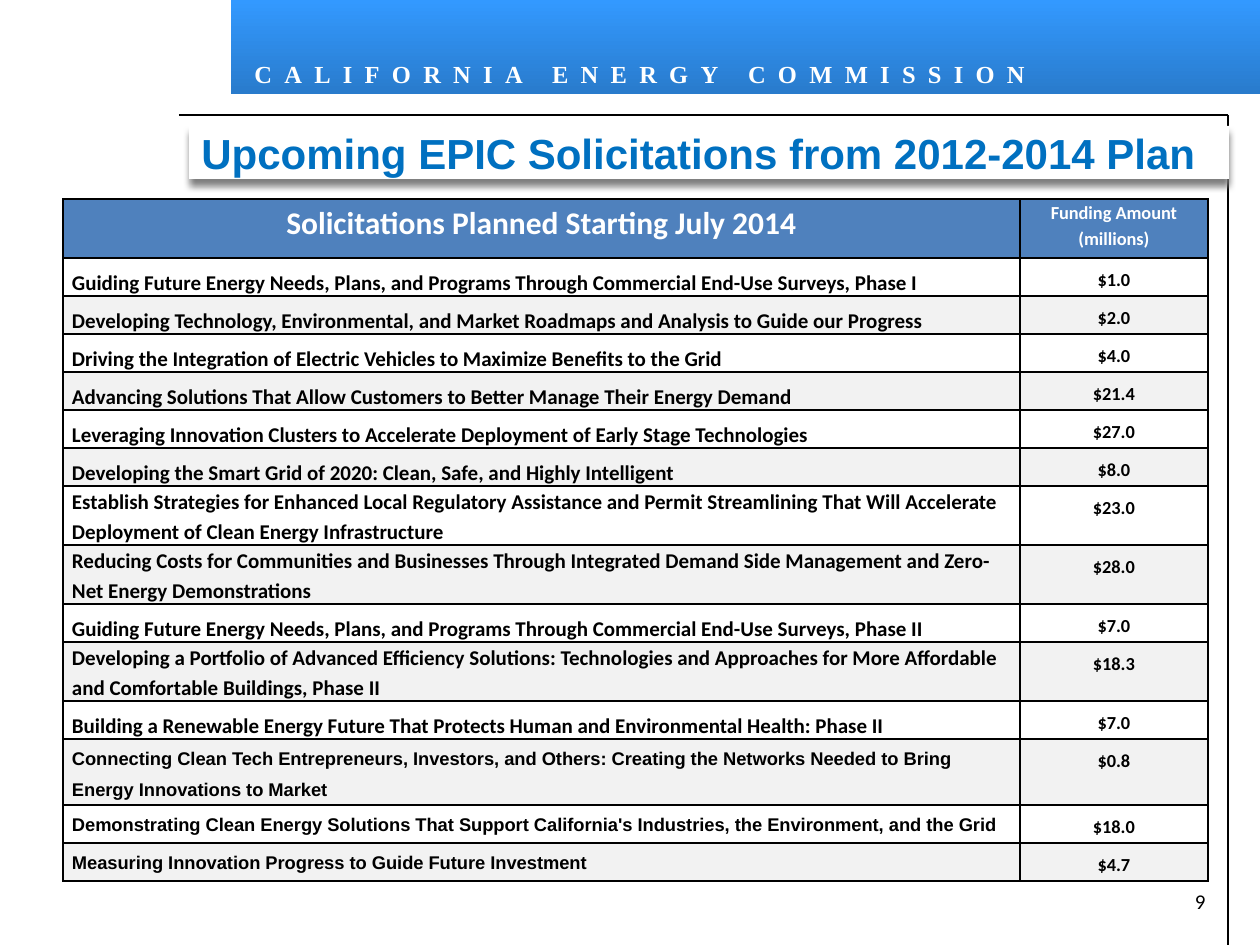
from pptx import Presentation
from pptx.dml.color import RGBColor
from pptx.enum.shapes import MSO_CONNECTOR, MSO_SHAPE
from pptx.enum.text import MSO_ANCHOR, PP_ALIGN
from pptx.oxml import parse_xml
from pptx.oxml.ns import nsdecls
from pptx.util import Pt

EMU_PER_PX = 914400 // 126

WHITE = RGBColor(0xFF, 0xFF, 0xFF)
BLACK = RGBColor(0x00, 0x00, 0x00)
BANNER_TOP = RGBColor(0x33, 0x99, 0xFF)
BANNER_BOTTOM = RGBColor(0x29, 0x7B, 0xCC)
TITLE_BLUE = RGBColor(0x00, 0x70, 0xC0)
HEADER_BLUE = RGBColor(0x4F, 0x81, 0xBD)
BAND_GRAY = RGBColor(0xF2, 0xF2, 0xF2)

HEADER_HEIGHT = 59
COLUMN_WIDTHS = (957, 188)

SOLICITATIONS = [
    ("Guiding Future Energy Needs, Plans, and Programs Through Commercial End-Use Surveys, Phase I", "$1.0", 38),
    ("Developing Technology, Environmental, and Market Roadmaps and Analysis to Guide our Progress", "$2.0", 38),
    ("Driving the Integration of Electric Vehicles to Maximize Benefits to the Grid", "$4.0", 38),
    ("Advancing Solutions That Allow Customers to Better Manage Their Energy Demand", "$21.4", 38),
    ("Leveraging Innovation Clusters to Accelerate Deployment of Early Stage Technologies", "$27.0", 38),
    ("Developing the Smart Grid of 2020: Clean, Safe, and Highly Intelligent", "$8.0", 38),
    ("Establish Strategies for Enhanced Local Regulatory Assistance and Permit Streamlining That Will Accelerate "
     "Deployment of Clean Energy Infrastructure", "$23.0", 59),
    ("Reducing Costs for Communities and Businesses Through Integrated Demand Side Management and Zero-Net "
     "Energy Demonstrations", "$28.0", 59),
    ("Guiding Future Energy Needs, Plans, and Programs Through Commercial End-Use Surveys, Phase II", "$7.0", 38),
    ("Developing a Portfolio of Advanced Efficiency Solutions: Technologies and Approaches for More Affordable "
     "and Comfortable Buildings, Phase II", "$18.3", 59),
    ("Building a Renewable Energy Future That Protects Human and Environmental Health: Phase II", "$7.0", 38),
]
ARIAL_SOLICITATIONS = [
    ("Connecting Clean Tech Entrepreneurs, Investors, and Others: Creating the Networks Needed to Bring "
     "Energy Innovations to Market", "$0.8", 64),
    ("Demonstrating Clean Energy Solutions That Support California's Industries, the Environment, and the Grid",
     "$18.0", 38),
    ("Measuring Innovation Progress to Guide Future Investment", "$4.7", 38),
]


def px(length):
    return length * EMU_PER_PX


def write(text_frame, text, size, font_name, color, bold=True, align=PP_ALIGN.LEFT, line_spacing=None):
    text_frame.text = text
    text_frame.word_wrap = True
    paragraph = text_frame.paragraphs[0]
    paragraph.alignment = align
    paragraph.line_spacing = line_spacing
    font = paragraph.runs[0].font
    font.size = Pt(size)
    font.name = font_name
    font.bold = bold
    font.color.rgb = color


def add_text(slide, left, top, width, height, *text_style, **options):
    text_box = slide.shapes.add_textbox(px(left), px(top), px(width), px(height))
    write(text_box.text_frame, *text_style, **options)
    return text_box


def add_block(slide, left, top, width, height):
    shape = slide.shapes.add_shape(MSO_SHAPE.RECTANGLE, px(left), px(top), px(width), px(height))
    shape.shadow.inherit = False
    shape.line.fill.background()
    return shape


def add_rule(slide, x1, y1, x2, y2):
    rule = slide.shapes.add_connector(MSO_CONNECTOR.STRAIGHT, px(x1), px(y1), px(x2), px(y2))
    rule.line.color.rgb = BLACK
    rule.line.width = Pt(0.75)
    rule._element.spPr.append(parse_xml(f"<a:effectLst {nsdecls('a')}/>"))


def add_banner(slide):
    banner = add_block(slide, 231, 0, 1029, 94)
    banner.fill.gradient()
    banner.fill.gradient_angle = 270
    for stop, color in zip(banner.fill.gradient_stops, (BANNER_TOP, BANNER_BOTTOM)):
        stop.color.rgb = color
    text_box = add_text(slide, 242, 53, 1008, 42, "CALIFORNIA ENERGY COMMISSION", 14, "Times New Roman", WHITE)
    run = text_box.text_frame.paragraphs[0].runs[0]
    run.font._element.set("spc", "700")


def add_title(slide):
    title = add_block(slide, 189, 126, 1040, 53)
    title.fill.solid()
    title.fill.fore_color.rgb = WHITE
    effects = title._element.spPr.find("{*}effectLst")
    effects.append(parse_xml(
        f'<a:outerShdw {nsdecls("a")} blurRad="{Pt(4)}" dist="{Pt(4)}" dir="5400000" '
        'algn="t" rotWithShape="0"><a:srgbClr val="808080"/></a:outerShdw>'))
    title.text_frame.vertical_anchor = MSO_ANCHOR.MIDDLE
    write(title.text_frame, "Upcoming EPIC Solicitations from 2012-2014 Plan", 24, "Arial", TITLE_BLUE)


def fill_cell(cell, fill_color, *text_style, **options):
    cell.margin_left = cell.margin_right = px(9)
    cell.margin_top = cell.margin_bottom = 0
    properties = cell._tc.get_or_add_tcPr()
    for side in "LRTB":
        properties.append(parse_xml(
            f'<a:ln{side} {nsdecls("a")} w="{Pt(1)}"><a:solidFill>'
            f'<a:srgbClr val="{BLACK}"/></a:solidFill></a:ln{side}>'))
    cell.fill.solid()
    cell.fill.fore_color.rgb = fill_color
    write(cell.text_frame, *text_style, **options)


def add_solicitation_table(slide):
    rows = SOLICITATIONS + ARIAL_SOLICITATIONS
    heights = [HEADER_HEIGHT] + [height for _, _, height in rows]
    table = slide.shapes.add_table(
        len(heights), 2, px(63), px(199), px(sum(COLUMN_WIDTHS)), px(sum(heights))).table
    table.first_row = table.horz_banding = False
    for column, width in zip(table.columns, COLUMN_WIDTHS):
        column.width = px(width)
    for row, height in zip(table.rows, heights):
        row.height = px(height)

    headings = (("Solicitations Planned Starting July 2014", 18), ("Funding Amount (millions)", 10.5))
    for column, (heading, size) in enumerate(headings):
        fill_cell(table.cell(0, column), HEADER_BLUE, heading, size, "Calibri", WHITE,
                  align=PP_ALIGN.CENTER, line_spacing=1.15)

    for index, (name, amount, height) in enumerate(rows, start=1):
        band = WHITE if index % 2 else BAND_GRAY
        size, font_name = (12, "Calibri") if index <= len(SOLICITATIONS) else (10.5, "Arial")
        spacing = 1.15 if height == 59 else 1.5
        fill_cell(table.cell(index, 0), band, name, size, font_name, BLACK, line_spacing=spacing)
        fill_cell(table.cell(index, 1), band, amount, 10.5, "Calibri", BLACK,
                  align=PP_ALIGN.CENTER, line_spacing=1.5)


def main():
    presentation = Presentation()
    presentation.slide_width = px(1260)
    presentation.slide_height = px(945)
    slide = presentation.slides.add_slide(presentation.slide_layouts[6])
    add_banner(slide)
    add_rule(slide, 179, 115, 1228, 115)
    add_rule(slide, 1228, 115, 1228, 945)
    add_text(slide, 1155, 882, 63, 42, "9", 12, "Calibri", BLACK, bold=False, align=PP_ALIGN.RIGHT)
    add_title(slide)
    add_solicitation_table(slide)
    presentation.save("out.pptx")


if __name__ == "__main__":
    main()
